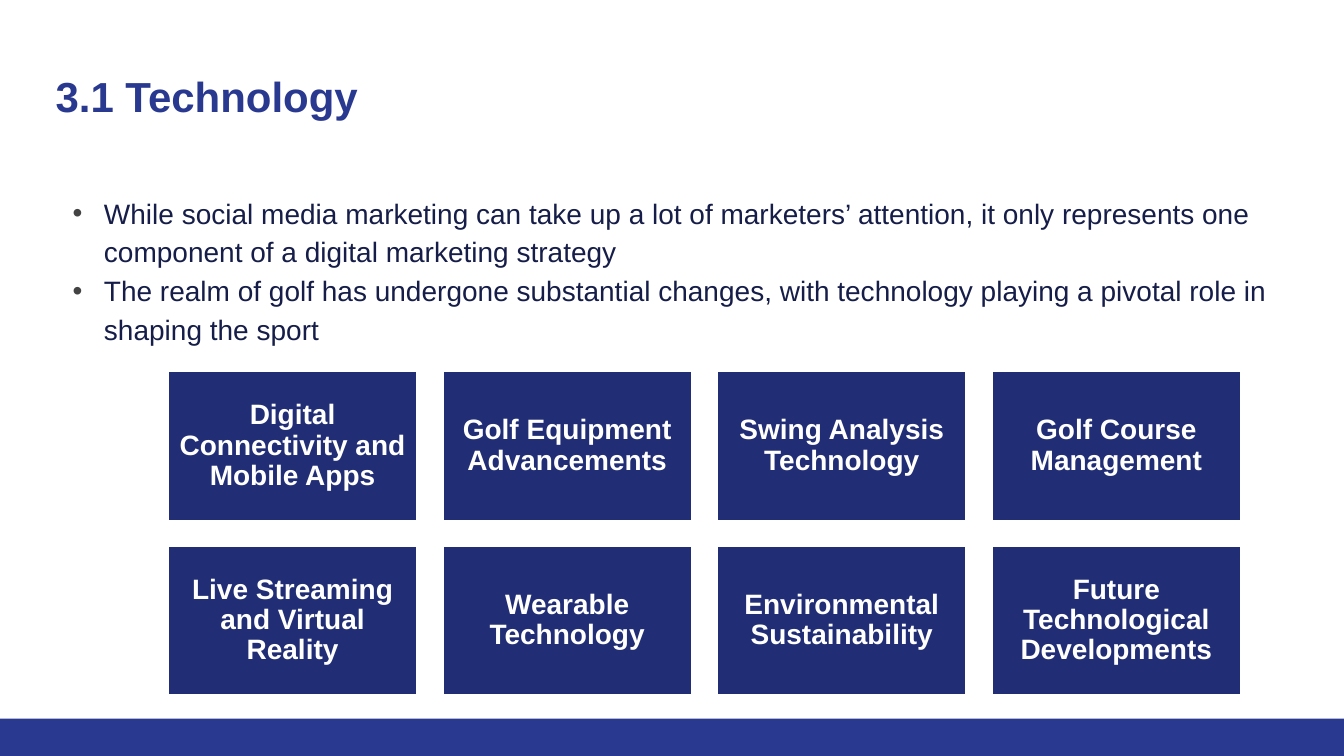
from dataclasses import dataclass

from lxml.etree import SubElement
from pptx import Presentation
from pptx.dml.color import RGBColor
from pptx.enum.shapes import MSO_SHAPE as Preset
from pptx.enum.text import MSO_ANCHOR as Anchor, MSO_AUTO_SIZE as AutoSize, PP_ALIGN as Align
from pptx.oxml.ns import qn
from pptx.util import Cm, Pt

ROYAL = RGBColor(0x2A, 0x39, 0x90)
NAVY = RGBColor(0x21, 0x2D, 0x74)
INK = RGBColor(0x15, 0x1D, 0x48)
BULLET_GREY = RGBColor(0x43, 0x43, 0x43)
WHITE = RGBColor(0xFF, 0xFF, 0xFF)

SLIDE_WIDTH, SLIDE_HEIGHT = 33.87, 19.05
BAND_HEIGHT = 0.94
COLUMNS = 4
GRID_LEFT, GRID_TOP = 4.23, 9.35
TILE_WIDTH, TILE_HEIGHT = 6.29, 3.78
COLUMN_STEP, ROW_STEP = 6.92, 4.4

TITLE = "3.1 Technology"
POINTS = [
    "While social media marketing can take up a lot of marketers’ attention, "
    "it only represents one component of a digital marketing strategy",
    "The realm of golf has undergone substantial changes, "
    "with technology playing a pivotal role in shaping the sport",
]
TOPICS = [
    "Digital Connectivity and Mobile Apps",
    "Golf Equipment Advancements",
    "Swing Analysis Technology",
    "Golf Course Management",
    "Live Streaming and Virtual Reality",
    "Wearable Technology",
    "Environmental Sustainability",
    "Future Technological Developments",
]


@dataclass(frozen=True)
class Area:
    left: float
    top: float
    width: float
    height: float


@dataclass(frozen=True)
class TextStyle:
    size: int
    color: RGBColor
    bold: bool
    align: Align
    anchor: Anchor
    spacing: float
    inset: float


TITLE_STYLE = TextStyle(30, ROYAL, True, Align.LEFT, Anchor.TOP, 1.0, 0.25)
POINT_STYLE = TextStyle(20, INK, False, Align.LEFT, Anchor.TOP, 1.15, 0.25)
TOPIC_STYLE = TextStyle(20, WHITE, True, Align.CENTER, Anchor.MIDDLE, 0.9, 0.2)


def apply(target, values: dict) -> None:
    for name, value in values.items():
        setattr(target, name, value)


def place(placeholder, area: Area) -> None:
    apply(placeholder, {
        "left": Cm(area.left), "top": Cm(area.top),
        "width": Cm(area.width), "height": Cm(area.height),
    })


def write(frame, lines: list[str], style: TextStyle) -> None:
    frame.text = "\n".join(lines)
    margins = ("margin_left", "margin_top", "margin_right", "margin_bottom")
    apply(frame, dict.fromkeys(margins, Cm(style.inset)))
    apply(frame, {
        "word_wrap": True, "auto_size": AutoSize.NONE, "vertical_anchor": style.anchor,
    })
    for paragraph in frame.paragraphs:
        apply(paragraph, {
            "alignment": style.align, "line_spacing": style.spacing,
            "space_before": Pt(0), "space_after": Pt(0),
        })
        for run in paragraph.runs:
            apply(run.font, {"name": "Arial", "size": Pt(style.size), "bold": style.bold})
            run.font.color.rgb = style.color


def add_bullet(paragraph) -> None:
    properties = paragraph._p.get_or_add_pPr()
    properties.set("marL", str(Cm(1.22)))
    properties.set("indent", str(Cm(-0.79)))
    color = SubElement(properties, qn("a:buClr"))
    SubElement(color, qn("a:srgbClr"), val=str(BULLET_GREY))
    SubElement(properties, qn("a:buFont"), typeface="Arial")
    SubElement(properties, qn("a:buChar"), char="•")


def add_block(slide, area: Area, color: RGBColor):
    block = slide.shapes.add_shape(
        Preset.RECTANGLE, Cm(area.left), Cm(area.top), Cm(area.width), Cm(area.height)
    )
    block.shadow.inherit = False
    block.fill.solid()
    block.fill.fore_color.rgb = color
    block.line.fill.background()
    return block


def add_topic(slide, index: int, topic: str) -> None:
    row, column = divmod(index, COLUMNS)
    area = Area(GRID_LEFT + column * COLUMN_STEP, GRID_TOP + row * ROW_STEP,
                TILE_WIDTH, TILE_HEIGHT)
    tile = add_block(slide, area, NAVY)
    tile.line.color.rgb = WHITE
    tile.line.width = Pt(2)
    write(tile.text_frame, [topic], TOPIC_STYLE)


def main() -> None:
    deck = Presentation()
    apply(deck, {"slide_width": Cm(SLIDE_WIDTH), "slide_height": Cm(SLIDE_HEIGHT)})
    slide = deck.slides.add_slide(deck.slide_layouts[1])

    add_block(slide, Area(0, SLIDE_HEIGHT - BAND_HEIGHT, SLIDE_WIDTH, BAND_HEIGHT), ROYAL)

    heading = slide.shapes.title
    place(heading, Area(1.15, 1.53, 31.55, 2.26))
    write(heading.text_frame, [TITLE], TITLE_STYLE)

    points = slide.placeholders[1]
    place(points, Area(1.15, 4.57, 31.55, 4.95))
    write(points.text_frame, POINTS, POINT_STYLE)
    for paragraph in points.text_frame.paragraphs:
        add_bullet(paragraph)

    for index, topic in enumerate(TOPICS):
        add_topic(slide, index, topic)

    deck.save("out.pptx")


if __name__ == "__main__":
    main()
